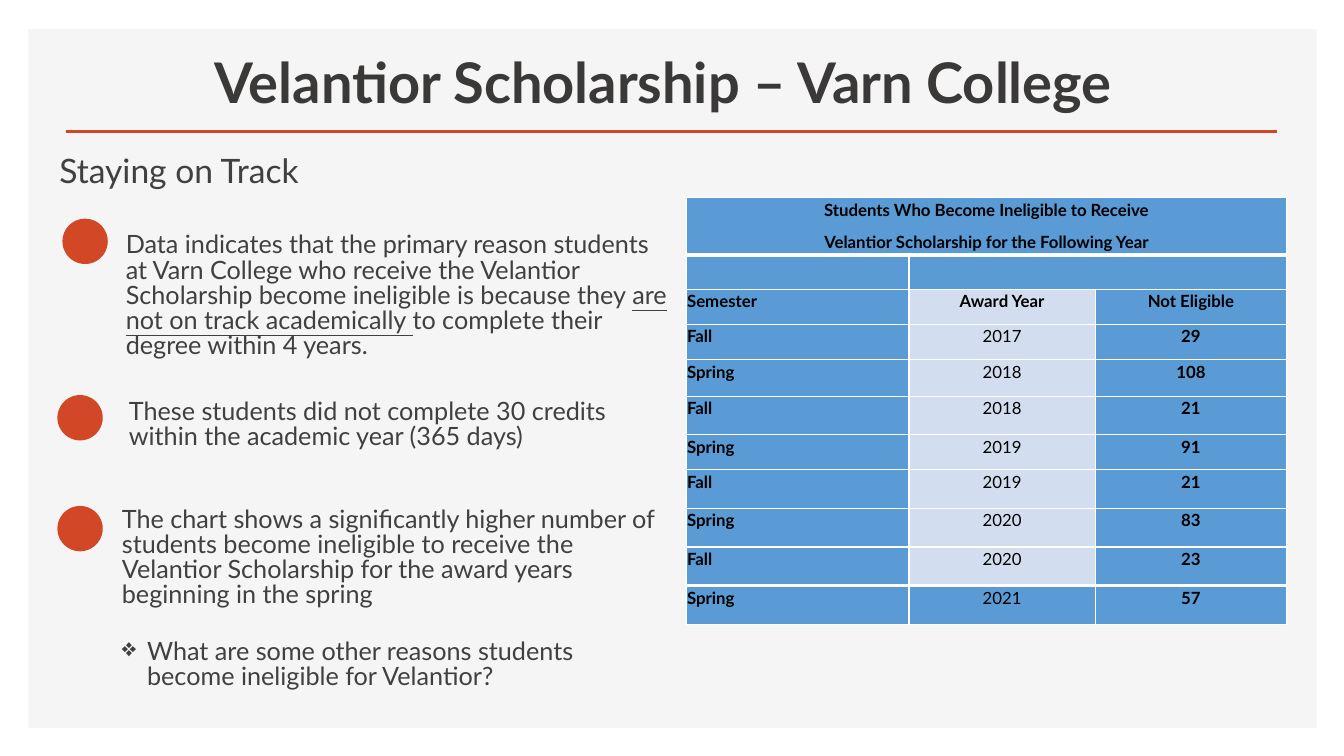
import dataclasses
import pptx
import pptx.dml.color
import pptx.enum.shapes
import pptx.enum.text
import pptx.oxml
import pptx.oxml.ns
import pptx.util

Pt = pptx.util.Pt
ALIGN = pptx.enum.text.PP_ALIGN
ANCHOR = pptx.enum.text.MSO_ANCHOR
SHAPE = pptx.enum.shapes.MSO_SHAPE


@dataclasses.dataclass(frozen=True)
class Theme:
    font: str = "Lato"
    panel: str = "F5F5F5"
    accent: str = "D24726"
    title: str = "3B3838"
    body: str = "404040"
    cell_text: str = "000000"
    cell: str = "5B9BD5"
    cell_light: str = "D2DEEF"
    border: str = "FFFFFF"
    title_size: float = 40
    heading_size: float = 24
    body_size: float = 18
    cell_size: float = 12


def rgb(value):
    return pptx.dml.color.RGBColor.from_string(value)


def xml(tag, attrs="", inner=""):
    ns = pptx.oxml.ns.nsdecls("a")
    return pptx.oxml.parse_xml(f"<a:{tag} {ns} {attrs}>{inner}</a:{tag}>")


def write_text(p, text, *, font, size, color, bold=False, underlined="",
               align=ALIGN.LEFT, spacing=None, before=None, after=None):
    p.alignment = align
    p.line_spacing = spacing
    p.space_before = before
    p.space_after = after
    head, mark, tail = text.partition(underlined) if underlined else (text, "", "")
    for part in filter(None, (head, mark, tail)):
        r = p.add_run()
        r.text = part
        r.font.name = font
        r.font.size = Pt(size)
        r.font.bold = bold
        r.font.color.rgb = rgb(color)
        if part == underlined:
            r.font.underline = True


class SlideBuilder:
    def __init__(self, prs, theme):
        self.theme = theme
        self.s = prs.slides.add_slide(prs.slide_layouts[5])

    def shape(self, kind, x, y, w, h, fill):
        sp = self.s.shapes.add_shape(kind, Pt(x), Pt(y), Pt(w), Pt(h))
        sp.shadow.inherit = False
        sp.fill.solid()
        sp.fill.fore_color.rgb = rgb(fill)
        sp.line.fill.background()

    def rule(self, x1, x2, y, width):
        line = self.s.shapes.add_connector(
            pptx.enum.shapes.MSO_CONNECTOR.STRAIGHT, Pt(x1), Pt(y), Pt(x2), Pt(y))
        line.line.color.rgb = rgb(self.theme.accent)
        line.line.width = Pt(width)
        line._element.spPr.append(xml("effectLst"))

    def title(self, text, x, y, w, h):
        sp = self.s.shapes.title
        self.s.shapes._spTree.append(sp._element)
        sp.left, sp.top, sp.width, sp.height = Pt(x), Pt(y), Pt(w), Pt(h)
        tf = sp.text_frame
        tf.word_wrap = True
        tf.auto_size = pptx.enum.text.MSO_AUTO_SIZE.NONE
        tf.vertical_anchor = ANCHOR.BOTTOM
        write_text(tf.paragraphs[0], text, font=self.theme.font, size=self.theme.title_size,
                   color=self.theme.title, bold=True, align=ALIGN.CENTER)

    def text(self, text, x, y, w, h, size=None, after=20, underlined="", bullet=None):
        tf = self.s.shapes.add_textbox(Pt(x), Pt(y), Pt(w), Pt(h)).text_frame
        tf.word_wrap = True
        p = tf.paragraphs[0]
        write_text(p, text, font=self.theme.font, size=size or self.theme.body_size,
                   color=self.theme.body, underlined=underlined,
                   spacing=Pt(18), before=Pt(10), after=Pt(after))
        if bullet:
            pPr = p._p.get_or_add_pPr()
            pPr.set("marL", str(Pt(18)))
            pPr.set("indent", str(-Pt(18)))
            pPr.append(xml("buChar", f'char="{bullet}"'))

    def cell(self, cell, lines, fill, bold, align, borders):
        cell.margin_left = cell.margin_right = cell.margin_top = Pt(0.5)
        cell.margin_bottom = 0
        cell.vertical_anchor = ANCHOR.TOP
        cell.fill.solid()
        cell.fill.fore_color.rgb = rgb(fill)
        tf = cell.text_frame
        for i, line in enumerate(lines):
            p = tf.add_paragraph() if i else tf.paragraphs[0]
            write_text(p, line, font=self.theme.font, size=self.theme.cell_size,
                       color=self.theme.cell_text, bold=bold, align=align,
                       spacing=1.06, after=Pt(8))
        tcPr = cell._tc.get_or_add_tcPr()
        color = f'<a:solidFill><a:srgbClr val="{self.theme.border}"/></a:solidFill>'
        for i, (side, width) in enumerate(zip("LRTB", borders)):
            tcPr.insert(i, xml(f"ln{side}", f'w="{Pt(width)}"', color))

    def table(self, rows, x, y, widths, heights, merges):
        table = self.s.shapes.add_table(len(rows), len(widths), Pt(x), Pt(y),
                                        Pt(sum(widths)), Pt(sum(heights))).table
        table.first_row = table.horz_banding = False
        for column, width in zip(table.columns, widths):
            column.width = Pt(width)
        for row, height in zip(table.rows, heights):
            row.height = Pt(height)
        last = len(rows) - 1
        for i, row in enumerate(rows):
            borders = (1, 1, 3 if i in (1, last) else 1, 3 if i in (0, last - 1) else 1)
            for j, lines in enumerate(row):
                award = j == 1 and i >= 2
                self.cell(table.cell(i, j), lines,
                          self.theme.cell_light if award and i < last else self.theme.cell,
                          not award or i == 2,
                          ALIGN.LEFT if j == 0 and i else ALIGN.CENTER, borders)
        for start, end in merges:
            table.cell(*start).merge(table.cell(*end))


HEADING = ["Students Who Become Ineligible to Receive",
           "Velantior Scholarship for the Following Year"]
RECORDS = [("Semester", "Award Year", "Not Eligible"),
           ("Fall", "2017", "29"), ("Spring", "2018", "108"),
           ("Fall", "2018", "21"), ("Spring", "2019", "91"),
           ("Fall", "2019", "21"), ("Spring", "2020", "83"),
           ("Fall", "2020", "23"), ("Spring", "2021", "57")]
POINTS = [
    ("Data indicates that the primary reason students at Varn College who receive the "
     "Velantior Scholarship become ineligible is because they are not on track academically "
     "to complete their degree within 4 years.",
     (44.6, 156.2), (82.8, 163.4, 401, 93.6), 6, "are not on track academically "),
    ("These students did not complete 30 credits within the academic year (365 days)",
     (41, 282.2), (85, 282.2, 391.7, 51.8), 6, ""),
    ("The chart shows a significantly higher number of students become ineligible to receive "
     "the Velantior Scholarship for the award years beginning in the spring",
     (41, 361.4), (80, 359.3, 396.7, 75.6), 20, ""),
]


def main():
    theme = Theme()
    prs = pptx.Presentation()
    prs.slide_width, prs.slide_height = Pt(960), Pt(540)
    slide = SlideBuilder(prs, theme)
    slide.shape(SHAPE.RECTANGLE, 20.2, 20.9, 920.2, 499, theme.panel)
    slide.rule(47.5, 912.2, 94, 2)
    slide.title("Velantior Scholarship – Varn College", 41, 35.3, 865.4, 50.4)
    slide.text("Staying on Track", 35.3, 114.5, 402.5, 37.4, size=theme.heading_size)
    for text, dot, box, after, underlined in POINTS:
        slide.shape(SHAPE.OVAL, *dot, 32.4, 32.4, theme.accent)
        slide.text(text, *box, after=after, underlined=underlined)
    slide.text("What are some other reasons students become ineligible for Velantior?",
               80, 453.6, 401, 42.5, bullet="❖")
    rows = [[HEADING, [], []], [[], [], []]]
    rows += [[[value] for value in record] for record in RECORDS]
    slide.table(rows, 490.3, 141.1, [159, 133, 136.8],
                [41, 24.5, 25, 25.5, 26, 27.5, 25] + [27.6] * 4,
                [((0, 0), (0, 2)), ((1, 1), (1, 2))])
    prs.save("out.pptx")


if __name__ == "__main__":
    main()
